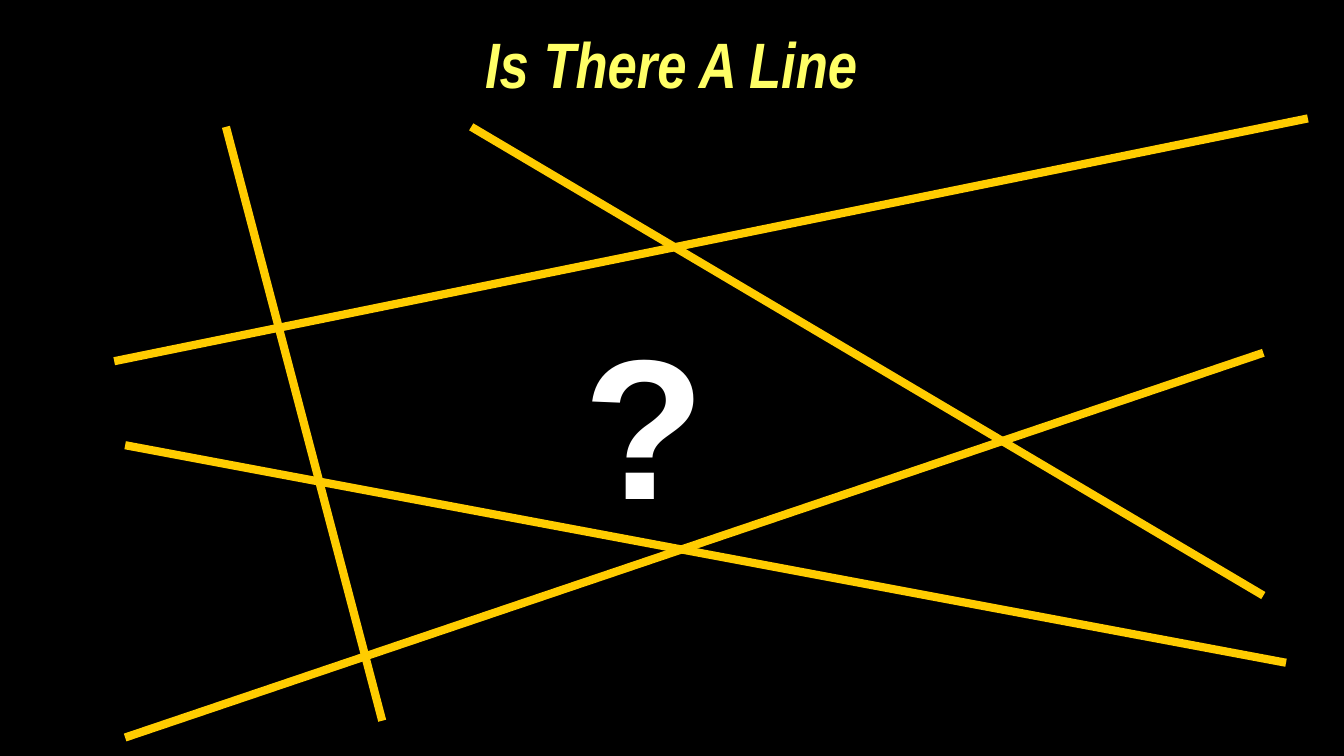
from pptx import Presentation
from pptx.dml.color import RGBColor as RGB
from pptx.enum.shapes import MSO_CONNECTOR as Link
from pptx.enum.text import MSO_ANCHOR as Anchor, PP_ALIGN as Align
from pptx.util import Inches, Pt
from lxml.etree import SubElement as Sub
from pptx.oxml.ns import qn

deck = Presentation()
deck.slide_width, deck.slide_height = Inches(16), Inches(9)
col, row = deck.slide_width / 16, deck.slide_height / 9
slide = deck.slides.add_slide(deck.slide_layouts[6])


def tint(hue):
    """Turn a hex string into a colour."""
    return RGB.from_string(hue)


def write(text, left, top, width, height, *, font, size, hue, italic=False,
          align=Align.LEFT, anchor=Anchor.TOP, lead=1.0, before=0):
    """Place bold text in a box given in columns and rows."""
    box = slide.shapes.add_textbox(round(left * col), round(top * row),
                                   round(width * col), round(height * row))
    frame = box.text_frame
    frame.word_wrap = True
    frame.vertical_anchor = anchor
    frame.margin_left = frame.margin_right = Inches(0.14)
    frame.margin_top = frame.margin_bottom = Inches(0.07)
    para = frame.paragraphs[0]
    para.alignment, para.line_spacing = align, lead
    para.space_before = Pt(before)
    run = para.add_run()
    run.text = text
    face = run.font
    face.name, face.size = font, Pt(size)
    face.bold, face.italic = True, italic
    face.color.rgb = tint(hue)


back = slide.background.fill
back.solid()
back.fore_color.rgb = tint("000000")

# Each line runs from one column and row to another
lines = [
    (1.36, 4.3, 15.57, 1.41),
    (5.61, 1.51, 15.04, 7.09),
    (1.49, 5.3, 15.31, 7.89),
    (1.49, 8.78, 15.04, 4.2),
    (2.69, 1.51, 4.55, 8.58),
]
for x1, y1, x2, y2 in lines:
    line = slide.shapes.add_connector(
        Link.STRAIGHT, round(x1 * col), round(y1 * row),
        round(x2 * col), round(y2 * row))
    line.line.color.rgb = tint("FFCC00")
    line.line.width = Pt(7)
    Sub(line._element.spPr, qn("a:effectLst"))

write("Is There A Line", 0.47, 0.45, 15.04, 0.85, font="Arial Narrow", size=55,
      hue="FFFF66", italic=True, align=Align.CENTER, anchor=Anchor.BOTTOM,
      lead=0.95)
write("?", 6.81, 3.5, 1.73, 2.99, font="Arial", size=171, hue="FFFFFF",
      before=16)

deck.save("out.pptx")
